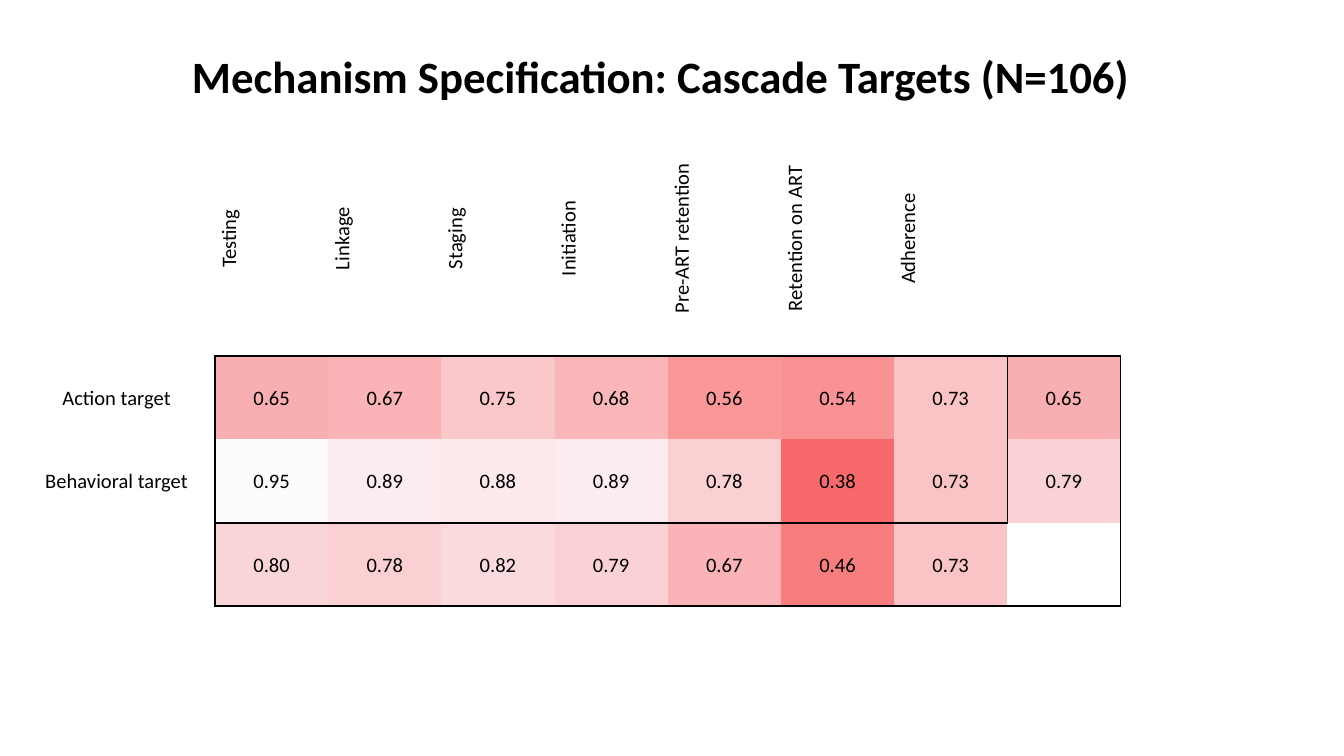
"""Build the cascade targets heat map slide."""
from lxml import etree
from pptx import Presentation
from pptx.dml.color import RGBColor
from pptx.enum.text import MSO_ANCHOR, MSO_AUTO_SIZE, PP_ALIGN
from pptx.oxml.ns import qn
from pptx.util import Inches, Pt

CENTER = PP_ALIGN.CENTER
MIDDLE = MSO_ANCHOR.MIDDLE
GROW = MSO_AUTO_SIZE.SHAPE_TO_FIT_TEXT
BLACK = RGBColor(0x00, 0x00, 0x00)
LOW = RGBColor(0xF8, 0x69, 0x6B)
HIGH = RGBColor(0xFC, 0xFC, 0xFF)
NO_STYLE = "{2D5ABB26-0587-4C30-8999-92F81FD0307C}"

TITLE = "Mechanism Specification: Cascade Targets (N=106)"
TITLE_FONT = {"name": "Calibri", "size": Pt(24), "bold": True}
CELL_FONT = {"name": "Calibri", "size": Pt(11), "bold": False}
CELL_FORMAT = {
    "vertical_anchor": MIDDLE,
    "margin_left": Inches(0.01),
    "margin_right": Inches(0.01),
    "margin_top": Inches(0.01),
    "margin_bottom": 0,
}
STAGES = ["Testing", "Linkage", "Staging", "Initiation",
          "Pre-ART retention", "Retention on ART", "Adherence"]
TARGETS = ["Action target ", "Behavioral target ", ""]
SCORES = [
    [0.65, 0.67, 0.75, 0.68, 0.56, 0.54, 0.73, 0.65],
    [0.95, 0.89, 0.88, 0.89, 0.78, 0.38, 0.73, 0.79],
    [0.80, 0.78, 0.82, 0.79, 0.67, 0.46, 0.73, None],
]
TABLE_WIDTH = 8.17
LABEL_WIDTH = 1.43
COL_WIDTHS = [LABEL_WIDTH] + [(TABLE_WIDTH - LABEL_WIDTH) / 8] * 8
ROW_HEIGHTS = [1.75] + [0.62] * 3
ROW_RULES = {1: range(1, 9), 3: range(1, 8), 4: range(1, 9)}
COL_RULES = {1: range(1, 4), 8: range(1, 3), 9: range(1, 4)}


def set_all(obj, values):
    """Set each attribute in values on obj."""
    for name, value in values.items():
        setattr(obj, name, value)


def write(tf, text, font):
    """Write one centred paragraph in a text frame."""
    p = tf.paragraphs[0]
    p.alignment = CENTER
    r = p.add_run()
    r.text = text
    set_all(r.font, font)
    r.font.color.rgb = BLACK


def heat_color(score):
    """Return the colour of a score on the low to high scale."""
    scores = [v for row in SCORES for v in row if v is not None]
    share = (score - min(scores)) / (max(scores) - min(scores))
    return RGBColor(*(int(a + (b - a) * share) for a, b in zip(LOW, HIGH)))


def add_borders(cell, row, col):
    """Draw the cell sides that lie on a ruled line and clear the others."""
    sides = {
        "a:lnL": row in COL_RULES.get(col, ()),
        "a:lnR": row in COL_RULES.get(col + 1, ()),
        "a:lnT": col in ROW_RULES.get(row, ()),
        "a:lnB": col in ROW_RULES.get(row + 1, ()),
    }
    tc_pr = cell._tc.get_or_add_tcPr()
    for tag, ruled in sides.items():
        ln = etree.SubElement(tc_pr, qn(tag), w=str(Pt(1)))
        if ruled:
            fill = etree.SubElement(ln, qn("a:solidFill"))
            etree.SubElement(fill, qn("a:srgbClr"), val=str(BLACK))
        else:
            etree.SubElement(ln, qn("a:noFill"))


def fill_cell(cell, text, score=None):
    """Write a cell and colour it by its score."""
    set_all(cell, CELL_FORMAT)
    if text:
        write(cell.text_frame, text, CELL_FONT)
    if score is None:
        cell.fill.background()
    else:
        cell.fill.solid()
        cell.fill.fore_color.rgb = heat_color(score)


def add_title(s):
    """Place and format the slide title."""
    sp = s.shapes.title
    set_all(sp, {"left": Inches(0.5), "top": Inches(0.31),
                 "width": Inches(8.83), "height": Inches(0.5)})
    write(sp.text_frame, TITLE, TITLE_FONT)
    set_all(sp.text_frame, {"word_wrap": True, "auto_size": GROW})


def add_heat_map(s):
    """Add the table of scores by target and cascade stage."""
    frame = s.shapes.add_table(len(ROW_HEIGHTS), len(COL_WIDTHS),
                               Inches(0.17), Inches(0.9),
                               Inches(TABLE_WIDTH), Inches(sum(ROW_HEIGHTS)))
    table = frame.table
    set_all(table, {"first_row": False, "horz_banding": False})
    table._tbl.tblPr.find(qn("a:tableStyleId")).text = NO_STYLE
    for column, width in zip(table.columns, COL_WIDTHS):
        column.width = Inches(width)
    for row, height in zip(table.rows, ROW_HEIGHTS):
        row.height = Inches(height)
    texts = [["", *STAGES, ""]]
    for target, scores in zip(TARGETS, SCORES):
        texts.append([target] + ["" if v is None else f"{v:.2f}" for v in scores])
    for i, row in enumerate(texts):
        for j, text in enumerate(row):
            cell = table.cell(i, j)
            add_borders(cell, i, j)
            fill_cell(cell, text, SCORES[i - 1][j - 1] if i and j else None)
            if i == 0 and text:
                cell._tc.tcPr.set("vert", "vert270")


def main():
    """Build and save the slide."""
    prs = Presentation()
    width = Inches(10)
    set_all(prs, {"slide_width": width, "slide_height": width * 9 // 16})
    s = prs.slides.add_slide(prs.slide_layouts[5])
    add_heat_map(s)
    add_title(s)
    prs.save("out.pptx")


if __name__ == "__main__":
    main()
